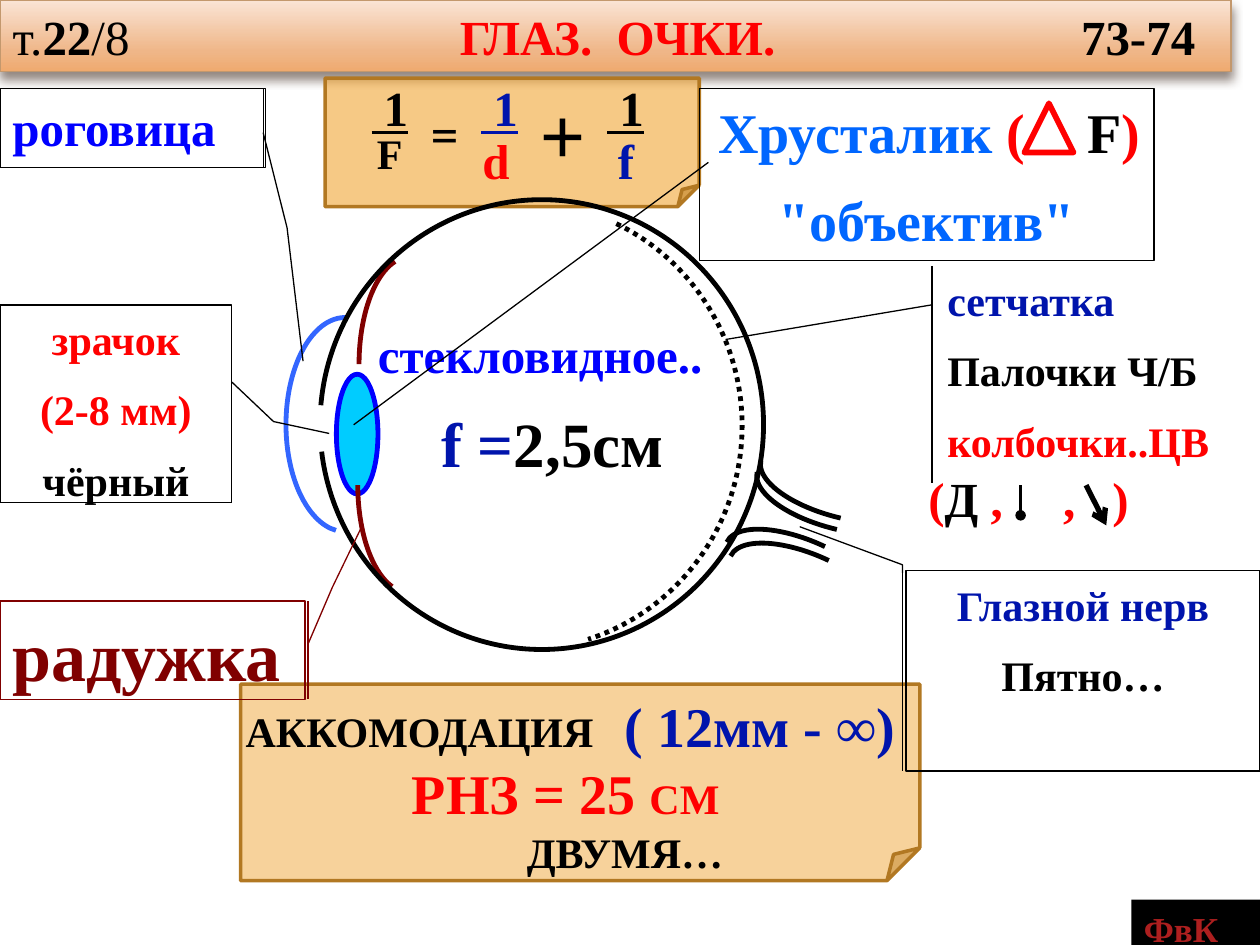
from collections import namedtuple

from pptx import Presentation
from pptx import util as u
from pptx.dml import color
from pptx.enum import dml, shapes, text
from pptx.oxml import ns, parse_xml

COLUMNS, ROWS = 100, 75
WIDTH, HEIGHT = u.Inches(10), u.Inches(7.5)
BLACK, RED, NAVY, BLUE, MAROON, SKY = "000000", "FF0000", "0014AC", "0000FF", "800000", "0066FF"
GOLD, BRONZE = "F0A22E", "B27822"
SERIF = "Times New Roman"
KIND = shapes.MSO_SHAPE
CENTER = text.PP_ALIGN.CENTER

Box = namedtuple("Box", "x y w h")
Run = namedtuple("Run", "words size hue bold font underline", defaults=(True, SERIF, False))
Para = namedtuple("Para", "runs align after tabs indent", defaults=(None, 10, (), 0))


def rgb(value):
    return color.RGBColor.from_string(value)


def col(n):
    return round(n * WIDTH / COLUMNS)


def row(n):
    return round(n * HEIGHT / ROWS)


def emu(box):
    return col(box.x), row(box.y), col(box.w), row(box.h)


def within(box, x, y, w, h):
    return Box(box.x + x, box.y + y, w, h)


def xml(body):
    tag, rest = body[1:].split(">", 1)
    return parse_xml(f"<{tag} {ns.nsdecls('a')}>{rest}")


def write(frame, paras):
    frame.word_wrap = True
    frame.vertical_anchor = text.MSO_ANCHOR.TOP
    for index, para in enumerate(paras):
        line = frame.add_paragraph() if index else frame.paragraphs[0]
        line.alignment = para.align or text.PP_ALIGN.LEFT
        line.space_before = u.Pt(0)
        line.space_after = u.Pt(para.after)
        line.line_spacing = 1.05 if para.after else 1.0
        props = line._p.get_or_add_pPr()
        if para.indent:
            props.set("marL", str(col(para.indent)))
        if para.tabs:
            stops = "".join(f'<a:tab pos="{col(t)}" algn="l"/>' for t in para.tabs)
            props.append(xml(f"<a:tabLst>{stops}</a:tabLst>"))
        for part in para.runs:
            run = line.add_run()
            run.text = part.words
            font = run.font
            font.size, font.name = u.Pt(part.size), part.font
            font.bold, font.underline = part.bold, part.underline
            font.color.rgb = rgb(part.hue)


def paint(shape, fill=None, line=None, width=0.75, alpha=None):
    shape.shadow.inherit = False
    if fill:
        shape.fill.solid()
        shape.fill.fore_color.rgb = rgb(fill)
        if alpha:
            tint = shape._element.spPr.find(".//" + ns.qn("a:srgbClr"))
            tint.append(parse_xml(f'<a:alpha {ns.nsdecls("a")} val="{alpha * 1000}"/>'))
    else:
        shape.fill.background()
    if line:
        shape.line.color.rgb = rgb(line)
        shape.line.width = u.Pt(width)
    else:
        shape.line.fill.background()


def figure(slide, kind, box, adjust=(), paras=(), **look):
    shape = slide.shapes.add_shape(kind, *emu(box))
    for index, value in enumerate(adjust):
        shape.adjustments[index] = value
    paint(shape, **look)
    if paras:
        write(shape.text_frame, paras)
    return shape


def label(slide, box, *paras):
    write(slide.shapes.add_textbox(*emu(box)).text_frame, paras)


def arc(slide, eye, cx, cy, rx, ry, start, end, hue=BLACK, turn=0):
    box = within(eye, cx - rx, cy - ry, 2 * rx, 2 * ry)
    curve = figure(slide, KIND.ARC, box, (start * 0.6, end * 0.6), line=hue, width=2.75)
    curve.rotation = turn
    return curve


def arrow(slide, start, end, width, head):
    line = slide.shapes.add_connector(
        shapes.MSO_CONNECTOR.STRAIGHT, col(start[0]), row(start[1]), col(end[0]), row(end[1]))
    line.line.color.rgb = rgb(BLACK)
    line.line.width = u.Pt(width)
    line.line._get_or_add_ln().append(parse_xml(f'<a:tailEnd {ns.nsdecls("a")} type="{head}"/>'))
    line._element.spPr.append(xml("<a:effectLst></a:effectLst>"))


def heading(slide, box):
    title = slide.shapes.title
    title.left, title.top, title.width, title.height = emu(box)
    title.fill.gradient()
    title.fill.gradient_angle = 270
    stops = title._element.spPr.find(".//" + ns.qn("a:gsLst"))
    shades = ((0, "FAE4D5"), (72, "EFB688"), (100, "EFAA6F"))
    stops.getparent().replace(stops, xml("<a:gsLst>" + "".join(
        f'<a:gs pos="{at * 1000}"><a:srgbClr val="{hue}"/></a:gs>' for at, hue in shades) + "</a:gsLst>"))
    title.line.color.rgb = rgb("C3986D")
    title.line.width = u.Pt(0.79)
    title._element.spPr.append(xml(
        f'<a:effectLst><a:outerShdw blurRad="{u.Pt(6)}" dist="{u.Pt(4)}" dir="5400000" rotWithShape="0">'
        '<a:srgbClr val="4E3B30"><a:alpha val="60000"/></a:srgbClr></a:outerShdw></a:effectLst>'))
    write(title.text_frame, [Para([
        Run("т.", 28, BLACK, False), Run("22", 28, BLACK), Run("/8\t", 28, BLACK, False),
        Run("ГЛАЗ.  ОЧКИ.\t", 28, RED), Run("73-74", 28, BLACK)], after=0, tabs=(35.5, 84.8))])


def lens_formula(slide, box):
    figure(slide, KIND.FOLDED_CORNER, box, fill=GOLD, alpha=58, line=BRONZE, width=2)
    for x, hue in ((2.7, BLACK), (11.4, NAVY), (21.4, BLACK)):
        label(slide, within(box, x, -0.5, 5.5, 5.7), Para([Run(" 1", 28, hue, underline=True)], after=0))
    for x, y, run in ((2.3, 3.4, Run(" F", 24, BLACK)), (11.5, 3.7, Run("d", 28, RED)),
                      (21.3, 3.7, Run(" f", 28, NAVY)), (7.4, 1.1, Run("=", 32, BLACK, False, "Calibri")),
                      (16.1, 0.2, Run("+", 44, BLACK, False, "Arial"))):
        label(slide, within(box, x, y, 6.4, 5.5), Para([run], after=0))


def eyeball(slide, box):
    figure(slide, KIND.OVAL, within(box, 4, 13.8, 3.3, 9.5), fill="00CCFF", line=BLUE, width=2.75)
    arc(slide, box, 4.7, 17.8, 4.7, 8.5, 95, 270, "3366FF")
    arc(slide, box, 9.7, 22.6, 4, 8.5, 99, 180, MAROON)
    arc(slide, box, 9.8, 13, 4, 8.5, 180, 262, MAROON)
    arc(slide, box, 20.3, 17.8, 17.6, 17.85, 185, 173)
    retina = arc(slide, box, 18.6, 17.9, 17.6, 17.8, 295.4, 72.4)
    retina.line.dash_style = dml.MSO_LINE.ROUND_DOT
    for cx, cy, start, turn in ((44.7, 22.3, 90, 13.1), (44.4, 23.2, 90, 13.1),
                                (41.8, 31.3, 180, 25.2), (41.5, 30.2, 180, 25.2)):
        arc(slide, box, cx, cy, 7.2, 3, start, start + 90, turn=turn)
    label(slide, within(box, 6.2, 9.1, 28.9, 16.4),
          Para([Run("стекловидное.. ", 28, BLUE)], CENTER),
          Para([Run(" ", 28, NAVY), Run("f =", 36, NAVY), Run("2,5см", 36, BLACK)], CENTER))


def callouts(slide, box):
    bent = KIND.LINE_CALLOUT_2_BORDER_AND_ACCENT_BAR
    notes = (
        (bent, (0, 7, 21.1, 6.3), (0.56, 0.99, 1.76, 1.08, 3.44, 1.14), BLACK,
         [Para([Run("роговица", 28, BLUE)])]),
        (bent, (0, 24.2, 18.4, 15.7), (0.39, 1, 0.59, 1.18, 0.65, 1.42), BLACK,
         [Para([Run(words, 24, hue)], CENTER)
          for words, hue in (("зрачок", RED), ("(2-8 мм)", RED), ("чёрный", BLACK))]),
        (bent, (0, 47.7, 24.2, 7.8), (0.44, 1.01, -0.14, 1.09, -0.78, 1.19), MAROON,
         [Para([Run("радужка", 40, MAROON)])]),
        (KIND.LINE_CALLOUT_1, (55.5, 7, 36.1, 13.7), (0.43, 0.02, 1.95, -0.76), BLACK,
         [Para([Run("Хрусталик ", 32, SKY), Run("(\t", 32, RED), Run("F", 32, BLACK), Run(")", 32, RED)],
               tabs=(29.3,), indent=0.5),
          Para([Run('"объектив"', 32, SKY)], CENTER)]),
        (KIND.LINE_CALLOUT_1_ACCENT_BAR, (74.2, 21.1, 23.4, 17.2), (0.18, -0.01, 0.34, -0.71), BLACK,
         [Para([Run(words, 24, hue)])
          for words, hue in (("сетчатка", NAVY), ("Палочки Ч/Б", BLACK), ("колбочки..ЦВ", RED))]),
        (bent, (71.9, 45.3, 28.1, 15.9), (0.01, -0.01, -0.03, -0.01, -0.22, -0.3), BLACK,
         [Para([Run("Глазной нерв", 24, NAVY)], CENTER), Para([Run("Пятно…", 24, BLACK)], CENTER)]))
    for kind, place, leader, hue, paras in notes:
        shape = figure(slide, kind, within(box, *place), leader, paras, line=hue)
        if kind == KIND.LINE_CALLOUT_1_ACCENT_BAR:
            shape.text_frame.word_wrap = False
    figure(slide, KIND.ISOSCELES_TRIANGLE, within(box, 81.3, 8.2, 3.9, 3.9), line=RED, width=3.25)


def accommodation(slide, box):
    figure(slide, KIND.FOLDED_CORNER, box, fill=GOLD, alpha=48, line=BRONZE, width=2)
    label(slide, within(box, -0.6, 0.1, 53.9, 15.8),
          Para([Run("АККОМОДАЦИЯ\t", 24, BLACK), Run("( 12мм - ∞)", 32, NAVY)], after=0, tabs=(30.1,)),
          Para([Run("РНЗ = 25 ", 32, RED), Run("СМ", 24, RED), Run(" ", 32, RED, False)], CENTER, 0),
          Para([Run("ДВУМЯ…", 24, BLACK)], CENTER, 0, indent=8.3))


def light_response(slide, box):
    label(slide, box, Para([Run("(", 28, RED), Run("Д ", 28, BLACK), Run(",\t,\t)", 28, RED)],
                           after=0, tabs=(10.7, 14.6)))
    top = box.y + 1.8
    arrow(slide, (box.x + 8.3, top), (box.x + 8.3, top + 2.4), 2, "oval")
    arrow(slide, (box.x + 13.5, top), (box.x + 15.1, top + 3.2), 3, "arrow")


def corner_tag(slide, box):
    figure(slide, KIND.RECTANGLE, box, fill=BLACK,
           paras=[Para([Run("ФвК", 20, "AD1F1F", underline=True)])])


def main():
    deck = Presentation()
    deck.slide_width, deck.slide_height = WIDTH, HEIGHT
    slide = deck.slides.add_slide(deck.slide_layouts[5])
    heading(slide, Box(0, 0, 97.7, 5.7))
    lens_formula(slide, Box(25.8, 6.2, 29.7, 10.2))
    accommodation(slide, Box(19.1, 54.3, 53.9, 15.6))
    eyeball(slide, Box(22.7, 15.9, 44.5, 35.7))
    callouts(slide, Box(0, 0, COLUMNS, ROWS))
    light_response(slide, Box(72.7, 36.7, 22.7, 5.7))
    corner_tag(slide, Box(89.8, 71.4, 10.2, 3.9))
    deck.save("out.pptx")


if __name__ == "__main__":
    main()
